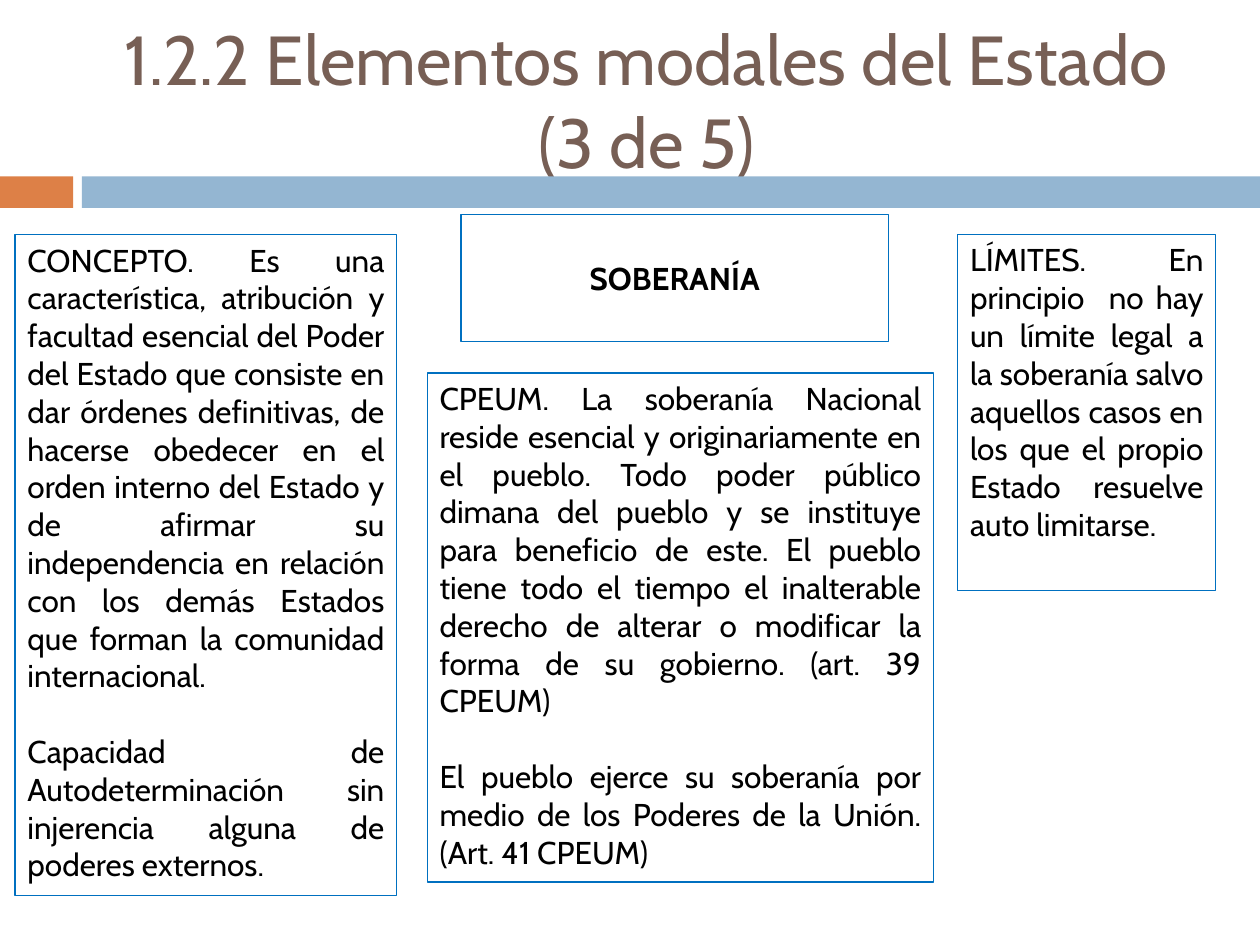
from pptx import Presentation
from pptx import util as u
from pptx.dml.color import RGBColor
from pptx.enum import shapes, text

W, H = 10, 7.5
FONT = "Cabin"
ORANGE = RGBColor(0xDD, 0x80, 0x47)
BLUE = RGBColor(0x94, 0xB6, 0xD2)
BROWN = RGBColor(0x77, 0x5F, 0x55)
OUTLINE = RGBColor(0x00, 0x70, 0xC0)
BLACK = RGBColor(0, 0, 0)

CONCEPT = [
    "CONCEPTO. Es una característica, atribución y facultad esencial del Poder "
    "del Estado que consiste en dar órdenes definitivas, de hacerse obedecer en "
    "el orden interno del Estado y de afirmar su independencia en relación con "
    "los demás Estados que forman la comunidad internacional.",
    "Capacidad de Autodeterminación sin injerencia alguna de poderes externos.",
]
CONSTITUTION = [
    "CPEUM. La soberanía Nacional reside esencial y originariamente en el pueblo. "
    "Todo poder público dimana del pueblo y se instituye para beneficio de este. "
    "El pueblo tiene todo el tiempo el inalterable derecho de alterar o modificar "
    "la forma de su gobierno. (art. 39 CPEUM)",
    "El pueblo ejerce su soberanía por medio de los Poderes de la Unión. "
    "(Art. 41 CPEUM)",
]
LIMITS = [
    "LÍMITES. En principio  no hay un límite legal a la soberanía salvo aquellos "
    "casos en los que el propio Estado resuelve auto limitarse.",
]


def place(box):
    return [u.Inches(v) for v in box]


def style_paragraph(p, size, color, align, bold=False):
    p.alignment = align
    for r in p.runs:
        r.font.name, r.font.size, r.font.bold = FONT, u.Pt(size), bold
        r.font.color.rgb = color


def add_rect(s, box, fill=None, line=None):
    sp = s.shapes.add_shape(shapes.MSO_SHAPE.RECTANGLE, *place(box))
    sp.shadow.inherit = False
    if fill is None:
        sp.fill.background()
    else:
        sp.fill.solid()
        sp.fill.fore_color.rgb = fill
    if line is None:
        sp.line.fill.background()
    else:
        sp.line.color.rgb = line
        sp.line.width = u.Pt(0.75)
    return sp


def add_band(s, box):
    """Orange tab, a thin gap, then the blue bar to the right edge."""
    x, y, w, h = box
    tab, gap = 0.58, 0.07
    add_rect(s, (x, y, tab, h), fill=ORANGE)
    add_rect(s, (x + tab + gap, y, w - tab - gap, h), fill=BLUE)


def add_title(s, box, title):
    sp = s.shapes.title
    sp.left, sp.top, sp.width, sp.height = place(box)
    tf = sp.text_frame
    tf.text = title
    tf.word_wrap = True
    tf.auto_size = text.MSO_AUTO_SIZE.NONE
    tf.vertical_anchor = text.MSO_ANCHOR.MIDDLE
    p = tf.paragraphs[0]
    p.line_spacing = 1.0
    style_paragraph(p, 39.6, BROWN, text.PP_ALIGN.CENTER)


def add_card(s, box, paragraphs, heading=False):
    """Outlined box holding a bold heading or justified paragraphs."""
    tf = add_rect(s, box, line=OUTLINE).text_frame
    tf.word_wrap = True
    tf.vertical_anchor = text.MSO_ANCHOR.MIDDLE if heading else text.MSO_ANCHOR.TOP
    align = text.PP_ALIGN.CENTER if heading else text.PP_ALIGN.JUSTIFY
    for i, words in enumerate(paragraphs):
        p = tf.add_paragraph() if i else tf.paragraphs[0]
        p.text = words
        if i:
            p.space_before = u.Pt(21.6)  # one line of 18 pt text
        style_paragraph(p, 18, BLACK, align, bold=heading)


def main():
    prs = Presentation()
    prs.slide_width, prs.slide_height = u.Inches(W), u.Inches(H)
    s = prs.slides.add_slide(prs.slide_layouts[5])

    # Header
    add_band(s, (0, 1.4, W, 0.25))
    add_title(s, (0.67, 0.25, 8.92, 1.08), "1.2.2 Elementos modales del Estado (3 de 5)")

    # Topic and its three explanations
    side_top = 1.86
    add_card(s, (3.66, 1.7, 3.39, 1.01), ["SOBERANÍA"], heading=True)
    add_card(s, (0.12, side_top, 3.03, 5.25), CONCEPT)
    add_card(s, (3.39, 2.96, 4.02, 4.04), CONSTITUTION)
    add_card(s, (7.6, side_top, 2.05, 2.83), LIMITS)

    prs.save("out.pptx")


if __name__ == "__main__":
    main()
